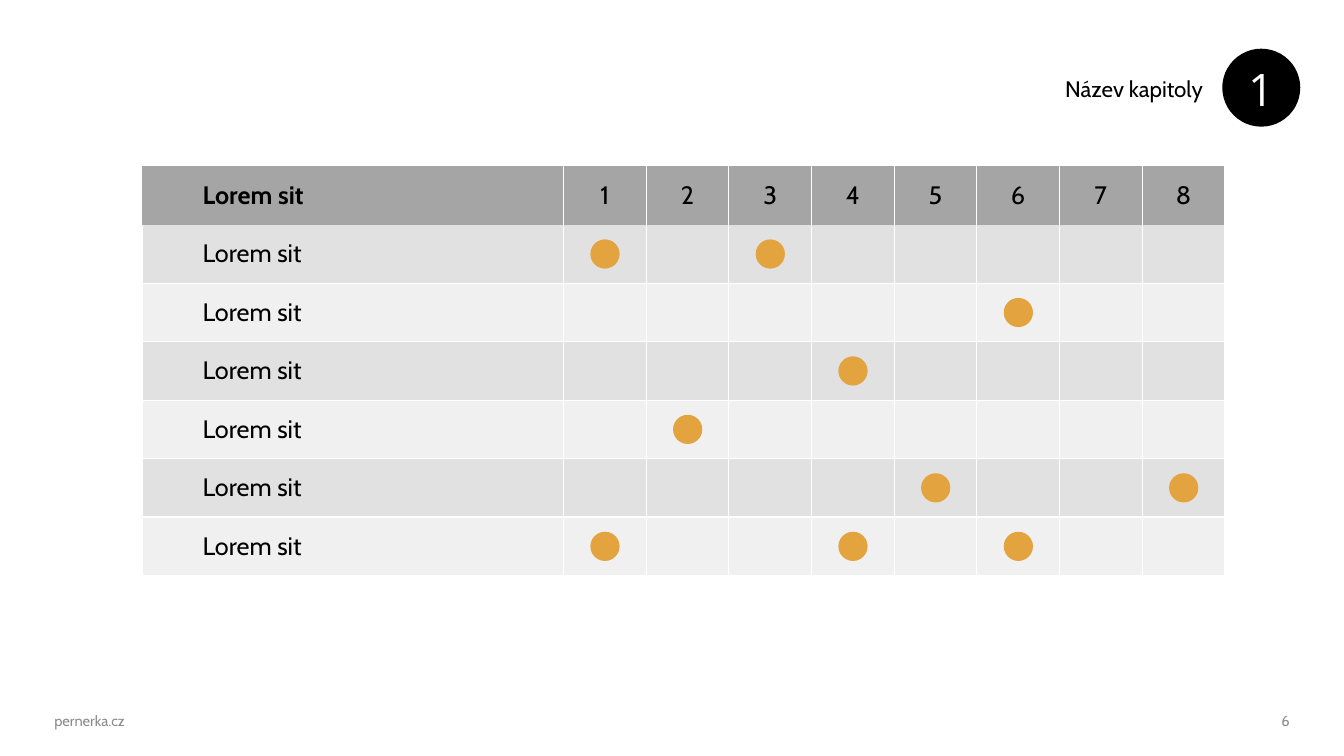
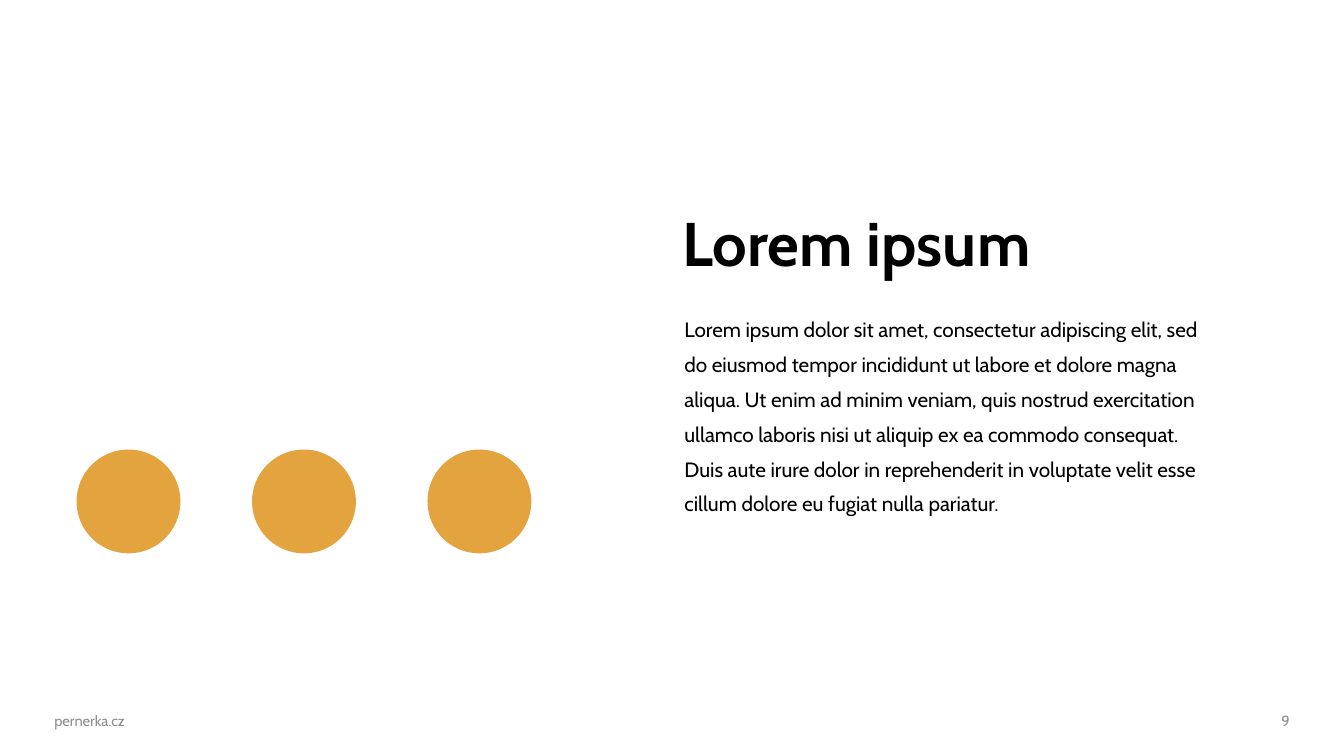
from lxml.etree import SubElement
from pptx import Presentation
from pptx.dml.color import RGBColor
from pptx.enum.shapes import MSO_SHAPE
from pptx.enum.text import MSO_ANCHOR as ANCHOR, PP_ALIGN as ALIGN
from pptx.oxml.ns import qn
from pptx.util import Inches, Pt

BLACK, WHITE, MUTED, ACCENT = "000000", "FFFFFF", "8C8C8C", "E3A33F"
HEADER, BAND_DARK, BAND_LIGHT = "A5A5A5", "E1E1E1", "F0F0F0"
FONT, NUMBER_FONT = "Cabin", "Open Sans"
SITE = "pernerka.cz"


def rgb(value):
    return RGBColor.from_string(value)


class Deck:
    def __init__(self):
        self.prs = Presentation()
        self.prs.slide_width, self.prs.slide_height = Inches(13.33), Inches(7.5)
        self.slide = None

    def add_slide(self, number):
        self.slide = self.prs.slides.add_slide(self.prs.slide_layouts[6])
        self.text(str(number), 9.89, 6.95, 3, 0.4, 10.5, MUTED,
                  align=ALIGN.RIGHT, anchor=ANCHOR.MIDDLE)
        self.text(SITE, 0.44, 6.95, 4.5, 0.4, 10.5, MUTED, anchor=ANCHOR.MIDDLE)

    def style(self, p, size, color=BLACK, bold=False, align=ALIGN.LEFT, font=FONT):
        p.alignment = align
        for r in p.runs:
            r.font.name, r.font.size, r.font.bold = font, Pt(size), bold
            r.font.color.rgb = rgb(color)

    def text(self, text, x, y, w, h, size, color=BLACK, bold=False, align=ALIGN.LEFT,
             anchor=ANCHOR.TOP, spacing=1.0, font=FONT):
        sp = self.slide.shapes.add_textbox(Inches(x), Inches(y), Inches(w), Inches(h))
        tf = sp.text_frame
        tf.word_wrap, tf.vertical_anchor = True, anchor
        tf.text = text
        p = tf.paragraphs[0]
        p.line_spacing = spacing
        self.style(p, size, color, bold, align, font)

    def circle(self, x, y, size, color=ACCENT, outlined=False):
        sp = self.slide.shapes.add_shape(
            MSO_SHAPE.OVAL, Inches(x), Inches(y), Inches(size), Inches(size))
        sp.shadow.inherit = False
        sp.fill.solid()
        sp.fill.fore_color.rgb = rgb(color)
        if outlined:
            sp.line.color.rgb = rgb(color)
            sp.line.width = Pt(1)
        else:
            sp.line.fill.background()

    def chapter(self, number, name):
        self.circle(12.13, 0.49, 0.76, BLACK, outlined=True)
        self.text(name, 8.22, 0.73, 3.81, 0.96, 16, align=ALIGN.RIGHT, spacing=0.9)
        self.text(number, 12.28, 0.17, 1, 1.48, 32, WHITE, anchor=ANCHOR.MIDDLE,
                  spacing=0.9, font=NUMBER_FONT)

    def borders(self, cell, ruled):
        tc_pr = cell._tc.get_or_add_tcPr()
        for side in "LRTB":
            ln = SubElement(tc_pr, qn(f"a:ln{side}"), w=str(Pt(1)))
            if side in ruled:
                fill = SubElement(ln, qn("a:solidFill"))
                SubElement(fill, qn("a:srgbClr"), val=WHITE)
            else:
                SubElement(ln, qn("a:noFill"))

    def table(self, rows, x, y, widths, row_height):
        table = self.slide.shapes.add_table(
            len(rows), len(widths), Inches(x), Inches(y),
            Inches(sum(widths)), Inches(row_height * len(rows))).table
        for column, width in zip(table.columns, widths):
            column.width = Inches(width)
        for i, row in enumerate(rows):
            table.rows[i].height = Inches(row_height)
            fill = HEADER if i == 0 else BAND_DARK if i % 2 else BAND_LIGHT
            sides = {0: "LR", 1: "LRB"}.get(i, "LRTB")
            for j, value in enumerate(row):
                cell = table.cell(i, j)
                self.borders(cell, "R" if i == j == 0 else sides)
                cell.fill.solid()
                cell.fill.fore_color.rgb = rgb(fill)
                cell.vertical_anchor = ANCHOR.MIDDLE
                if j == 0:
                    cell.margin_left = Inches(0.6)
                cell.text = value
                self.style(cell.text_frame.paragraphs[0], 18, bold=i == j == 0,
                           align=ALIGN.CENTER if j else ALIGN.LEFT)


def matrix_slide(deck):
    left, top, label_width, mark_width, row_height, dot = 1.41, 1.65, 4.18, 0.82, 0.58, 0.29
    marks = [(1, 3), (6,), (4,), (2,), (5, 8), (1, 4, 6)]
    label, count = "Lorem sit", 8
    deck.add_slide(6)
    rows = [[label] + [str(n + 1) for n in range(count)]]
    rows += [[label] + [""] * count for _ in marks]
    deck.table(rows, left, top, [label_width] + [mark_width] * count, row_height)
    deck.chapter("1", "Název kapitoly")
    for i, columns in enumerate(marks, 1):
        for column in columns:
            deck.circle(left + label_width + mark_width * (column - 0.5) - dot / 2,
                        top + row_height * (i + 0.5) - dot / 2, dot)


def text_slide(deck):
    deck.add_slide(9)
    deck.text("Lorem ipsum", 6.67, 1.14, 6, 2.61, 44, bold=True,
              anchor=ANCHOR.MIDDLE, spacing=0.9)
    deck.text("Lorem ipsum dolor sit amet, consectetur adipiscing elit, sed do eiusmod "
              "tempor incididunt ut labore et dolore magna aliqua. Ut enim ad minim veniam, "
              "quis nostrud exercitation ullamco laboris nisi ut aliquip ex ea commodo "
              "consequat. Duis aute irure dolor in reprehenderit in voluptate velit esse "
              "cillum dolore eu fugiat nulla pariatur.",
              6.69, 3, 5.34, 2.61, 14.8, spacing=1.4)
    for i in range(3):
        deck.circle(0.76 + 1.74 * i, 4.46, 1.03)


def main():
    deck = Deck()
    matrix_slide(deck)
    text_slide(deck)
    deck.prs.save("out.pptx")


if __name__ == "__main__":
    main()
